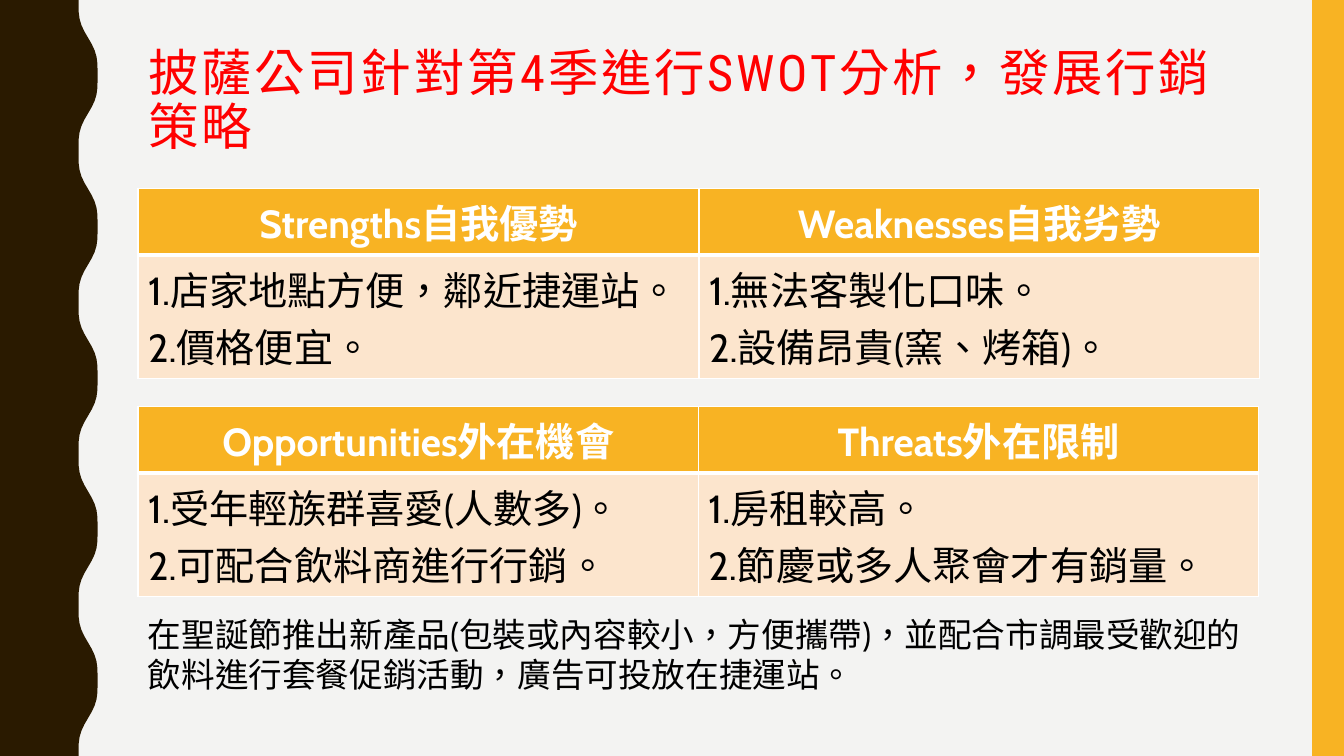
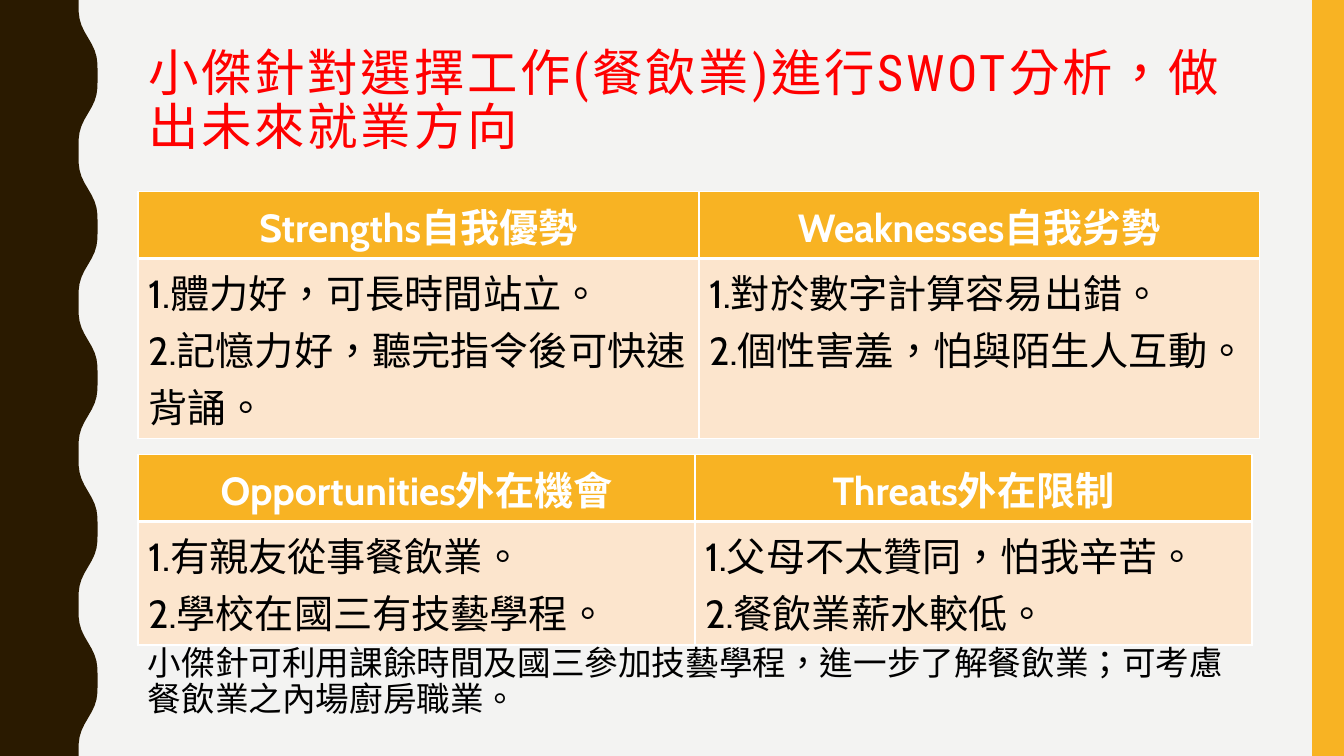
from dataclasses import dataclass
from math import cos, pi

from lxml.etree import SubElement
from pptx import Presentation
from pptx.dml.color import RGBColor
from pptx.enum.shapes import MSO_SHAPE
from pptx.enum.text import MSO_ANCHOR, MSO_AUTO_SIZE, PP_ALIGN
from pptx.oxml.ns import qn
from pptx.util import Cm, Pt

# Shared look
BROWN = RGBColor(0x2A, 0x1A, 0x00)
AMBER = RGBColor(0xF8, 0xB3, 0x23)
PEACH = RGBColor(0xFC, 0xE5, 0xCD)
PAPER = RGBColor(0xF3, 0xF3, 0xF2)
RED = RGBColor(0xFF, 0x00, 0x00)
WHITE = RGBColor(0xFF, 0xFF, 0xFF)
BLACK = RGBColor(0x00, 0x00, 0x00)

SLIDE_WIDTH, SLIDE_HEIGHT = Cm(33.87), Cm(19.05)
LEFT = Cm(3.48)
CONTENT_WIDTH = Cm(28.27)
HEADER_HEIGHT = Cm(1.44)

TITLE_FONT = {"name": "Roboto Condensed", "size": Pt(36), "bold": False}
HEADER_FONT = {"name": "Cabin", "size": Pt(28), "bold": True}
BODY_FONT = {"name": "Cabin", "size": Pt(28), "bold": False}
NOTE_FONT = {"size": Pt(24), "bold": False}


@dataclass
class Quadrant:
    heading: str
    points: tuple[str, str]


@dataclass
class SwotTable:
    top: float
    width: float
    body_height: float
    quadrants: tuple[Quadrant, Quadrant]


@dataclass
class Note:
    text: str
    top: float
    height: float
    font: str
    line_spacing: float
    anchor: MSO_ANCHOR
    auto_size: MSO_AUTO_SIZE


@dataclass
class SwotPage:
    title: str
    tables: tuple[SwotTable, SwotTable]
    note: Note


PAGES = (
    SwotPage(
        "披薩公司針對第4季進行SWOT分析，發展行銷策略",
        (
            SwotTable(4.75, 28.27, 2.62, (
                Quadrant("Strengths自我優勢", ("1.店家地點方便，鄰近捷運站。", "2.價格便宜。")),
                Quadrant("Weaknesses自我劣勢", ("1.無法客製化口味。", "2.設備昂貴(窯、烤箱)。")),
            )),
            SwotTable(10.24, 28.24, 2.62, (
                Quadrant("Opportunities外在機會", ("1.受年輕族群喜愛(人數多)。", "2.可配合飲料商進行行銷。")),
                Quadrant("Threats外在限制", ("1.房租較高。", "2.節慶或多人聚會才有銷量。")),
            )),
        ),
        Note("在聖誕節推出新產品(包裝或內容較小，方便攜帶)，並配合市調最受歡迎的飲料進行套餐促銷活動，廣告可投放在捷運站。",
             15.34, 2.31, "Cabin", 1.0, MSO_ANCHOR.TOP, MSO_AUTO_SIZE.SHAPE_TO_FIT_TEXT),
    ),
    SwotPage(
        "小傑針對選擇工作(餐飲業)進行SWOT分析，做出未來就業方向",
        (
            SwotTable(4.83, 28.27, 3.81, (
                Quadrant("Strengths自我優勢", ("1.體力好，可長時間站立。", "2.記憶力好，聽完指令後可快速背誦。")),
                Quadrant("Weaknesses自我劣勢", ("1.對於數字計算容易出錯。", "2.個性害羞，怕與陌生人互動。")),
            )),
            SwotTable(11.46, 28.07, 2.62, (
                Quadrant("Opportunities外在機會", ("1.有親友從事餐飲業。", "2.學校在國三有技藝學程。")),
                Quadrant("Threats外在限制", ("1.父母不太贊同，怕我辛苦。", "2.餐飲業薪水較低。")),
            )),
        ),
        Note("小傑針可利用課餘時間及國三參加技藝學程，進一步了解餐飲業；可考慮餐飲業之內場廚房職業。",
             15.37, 3.68, "Arial", 0.9, MSO_ANCHOR.MIDDLE, MSO_AUTO_SIZE.NONE),
    ),
)


def write(frame, lines, font: dict, color: RGBColor, align=PP_ALIGN.LEFT,
          line_spacing: float = 1.0, tracking: int = 0) -> None:
    """Fill a text frame with one paragraph per line; tracking is in 1/100 pt."""
    for index, line in enumerate(lines):
        para = frame.paragraphs[0] if index == 0 else frame.add_paragraph()
        para.alignment = align
        para.line_spacing = line_spacing
        span = para.add_run()
        span.text = line
        for name, value in font.items():
            setattr(span.font, name, value)
        span.font.color.rgb = color
        properties = span._r.get_or_add_rPr()
        properties.set("lang", "zh-TW")
        if tracking:
            properties.set("spc", str(tracking))


def wave_points() -> list[tuple[int, int]]:
    """Edge of the left band: five flattened cosine waves down the slide."""
    steps, waves = 120, 5
    points = []
    for step in range(steps + 1):
        angle = 2 * pi * waves * step / steps
        swing = 1.13 * cos(angle) - 0.13 * cos(3 * angle)
        points.append((Cm(2.22 - 0.24 * swing), SLIDE_HEIGHT * step // steps))
    return points


def decorate_layout(layout, page) -> None:
    """Give the layout its background and side bands, drawn via a page."""
    layout.background.fill.solid()
    layout.background.fill.fore_color.rgb = PAPER

    builder = page.shapes.build_freeform(0, 0, scale=1.0)
    builder.add_line_segments(wave_points() + [(0, SLIDE_HEIGHT)], close=True)
    wave = builder.convert_to_shape()
    stripe = page.shapes.add_shape(
        MSO_SHAPE.RECTANGLE, Cm(33.07), 0, Cm(0.8), SLIDE_HEIGHT)
    for number, (band, color) in enumerate(((wave, BROWN), (stripe, AMBER))):
        band.shadow.inherit = False
        band.fill.solid()
        band.fill.fore_color.rgb = color
        band.line.fill.background()
        band.element.nvSpPr.cNvPr.set("id", str(100 + number))
        layout.shapes.element.insert(2 + number, band.element)


def add_title(page, text: str) -> None:
    title = page.shapes.title
    title.left, title.top = LEFT, Cm(1.07)
    title.width, title.height = CONTENT_WIDTH, Cm(4.14)
    frame = title.text_frame
    frame.word_wrap = True
    frame.auto_size = MSO_AUTO_SIZE.NONE
    frame.vertical_anchor = MSO_ANCHOR.TOP
    write(frame, [text], TITLE_FONT, RED, line_spacing=0.9, tracking=200)


def style_cell(cell, fill: RGBColor, top: float, bottom: float) -> None:
    """White borders (widths in points), then the fill that must follow them."""
    properties = cell._tc.get_or_add_tcPr()
    for side, width in (("L", 1), ("R", 1), ("T", top), ("B", bottom)):
        border = SubElement(properties, qn(f"a:ln{side}"), w=str(Pt(width)))
        solid = SubElement(border, qn("a:solidFill"))
        SubElement(solid, qn("a:srgbClr"), val=str(WHITE))
    cell.fill.solid()
    cell.fill.fore_color.rgb = fill


def add_swot_table(page, swot: SwotTable) -> None:
    body_height = Cm(swot.body_height)
    table = page.shapes.add_table(
        2, 2, LEFT, Cm(swot.top), Cm(swot.width), HEADER_HEIGHT + body_height).table
    table.horz_banding = False
    table.rows[0].height, table.rows[1].height = HEADER_HEIGHT, body_height
    for column, quadrant in enumerate(swot.quadrants):
        header, body = table.cell(0, column), table.cell(1, column)
        style_cell(header, AMBER, top=1, bottom=3)
        style_cell(body, PEACH, top=3, bottom=1)
        write(header.text_frame, [quadrant.heading], HEADER_FONT, WHITE, PP_ALIGN.CENTER)
        write(body.text_frame, quadrant.points, BODY_FONT, BLACK)


def add_note(page, note: Note) -> None:
    box = page.shapes.add_textbox(LEFT, Cm(note.top), Cm(28.07), Cm(note.height))
    frame = box.text_frame
    frame.word_wrap = True
    frame.auto_size = note.auto_size
    frame.vertical_anchor = note.anchor
    write(frame, [note.text], NOTE_FONT | {"name": note.font}, BLACK,
          line_spacing=note.line_spacing)


def main() -> None:
    deck = Presentation()
    deck.slide_width, deck.slide_height = SLIDE_WIDTH, SLIDE_HEIGHT
    layout = deck.slide_layouts.get_by_name("Title Only")
    for number, content in enumerate(PAGES):
        page = deck.slides.add_slide(layout)
        if number == 0:
            decorate_layout(layout, page)
        add_title(page, content.title)
        for swot in content.tables:
            add_swot_table(page, swot)
        add_note(page, content.note)
    deck.save("out.pptx")


if __name__ == "__main__":
    main()
